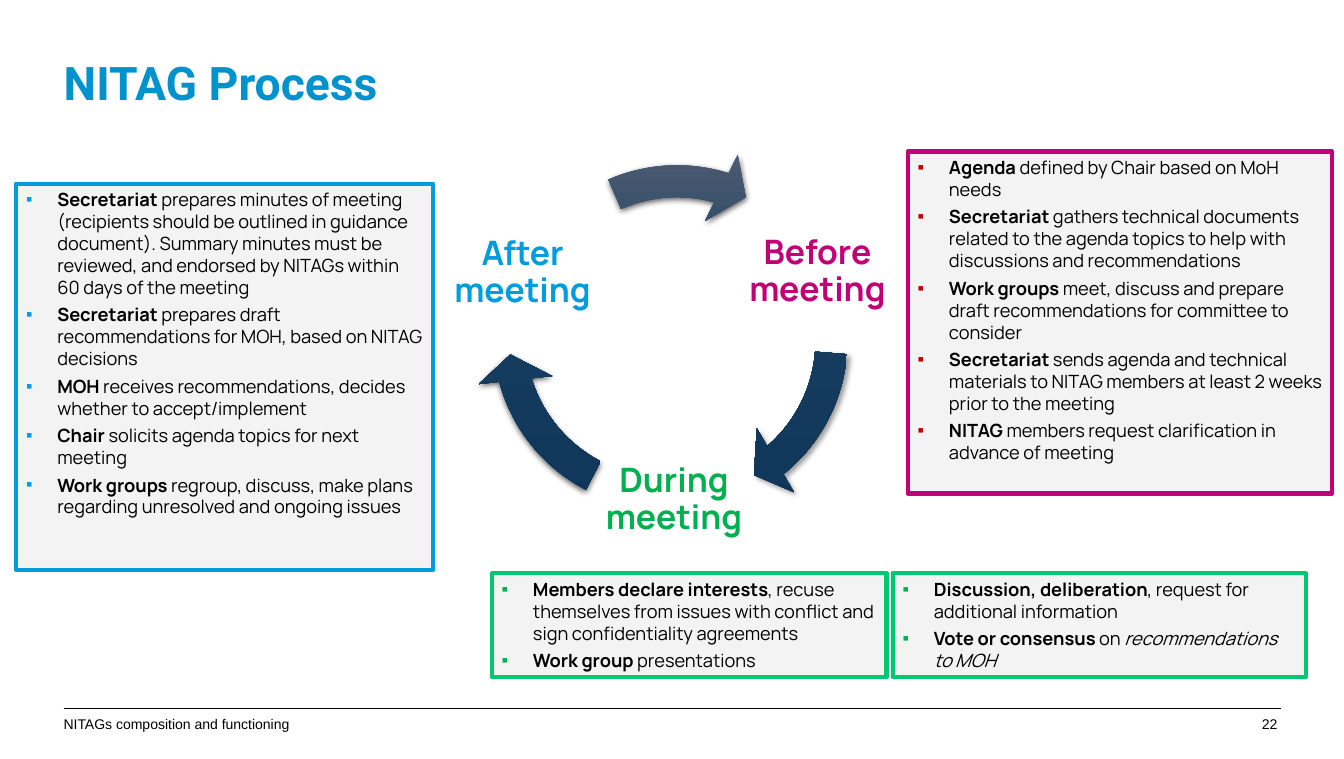
import pptx
import pptx.util
import pptx.dml.color
import pptx.enum.shapes
import pptx.enum.text
import pptx.oxml
import pptx.oxml.ns

Inches, Pt = pptx.util.Inches, pptx.util.Pt
Align = pptx.enum.text.PP_ALIGN
Anchor = pptx.enum.text.MSO_ANCHOR
Kind = pptx.enum.shapes.MSO_SHAPE

THEME = {
    "font": {"title": "Roboto", "body": "Manrope", "foot": "Arial"},
    "size": {"title": 33, "stage": 24, "body": 13, "foot": 10},
    "title": "0092CC", "ink": "000000", "panel": "F3F3F3",
    "blue": "009CDE", "pink": "C10077", "red": "C00000",
    "green": "00B050", "mint": "00C871",
    "arrow": ((0, "4D5C72"), (50, "153C5F"), (100, "0F3658")),
}

TITLE = "NITAG Process"
FOOT = "NITAGs composition and functioning"
PAGE = "22"

STAGES = [
    ("Before meeting", "pink", 7.29, 1.89),
    ("During meeting", "green", 5.87, 4.15),
    ("After meeting", "blue", 4.37, 1.9),
]

SOFT = (40, 4, 3, 45)
DEEP = (63, 4.5, 1.5, 90)
ARROWS = [
    (4.79, 1.47, 30.182, 2.724, SOFT),
    (4.68, 1.44, 98.481, 70.457, DEEP),
    (4.8, 1.43, 171.964, 147.823, DEEP),
]

PANELS = [
    ((0.16, 1.82, 4.13, 3.83), "blue", "blue", [
        [("Secretariat", "b"), (" prepares minutes of meeting (recipients should be outlined in "
                                "guidance document). Summary minutes must be reviewed, and "
                                "endorsed by NITAGs within 60 days of the meeting", "")],
        [("Secretariat", "b"), (" prepares draft recommendations for MOH, based on NITAG decisions", "")],
        [("MOH", "b"), (" receives recommendations, decides whether to accept/implement", "")],
        [("Chair", "b"), (" solicits agenda topics for next meeting", "")],
        [("Work groups", "b"), (" regroup, discuss, make plans regarding unresolved and ongoing issues", "")],
    ]),
    ((8.99, 1.5, 4.2, 3.39), "pink", "red", [
        [("Agenda", "b"), (" defined by Chair based on MoH needs", "")],
        [("Secretariat", "b"), (" gathers technical documents related to the agenda topics to help "
                                "with discussions and recommendations", "")],
        [("Work groups ", "b"), ("meet, discuss and prepare draft recommendations for committee to consider", "")],
        [("Secretariat", "b"), (" sends agenda and technical materials to NITAG members at least "
                                "2 weeks prior to the meeting", "")],
        [("NITAG ", "b"), ("members request clarification in advance of meeting", "")],
    ]),
    ((4.87, 5.68, 3.91, 1.03), "mint", "green", [
        [("Members declare interests", "b"), (", recuse themselves from issues with conflict and "
                                              "sign confidentiality agreements", "")],
        [("Work group ", "b"), ("presentations", "")],
    ]),
    ((8.84, 5.68, 4.09, 1.03), "mint", "green", [
        [("Discussion, deliberation", "b"), (", request for additional information", "")],
        [("Vote or consensus ", "b"), ("on ", ""), ("recommendations to MOH", "i")],
    ]),
]


def paint(name):
    return pptx.dml.color.RGBColor.from_string(THEME[name])


def parse(xml):
    head, tail = xml.split(">", 1)
    slash = "/" if head.endswith("/") else ""
    return pptx.oxml.parse_xml(f"{head.rstrip('/')} {pptx.oxml.ns.nsdecls('a')}{slash}>{tail}")


def write(para, text, size, face, tint, style=""):
    run = para.add_run()
    run.text = text
    font = run.font
    font.name = THEME["font"][face]
    font.size = Pt(THEME["size"][size])
    font.color.rgb = paint(tint)
    font.bold = "b" in style
    font.italic = "i" in style


def label(slide, box, text, size, face, tint, style="", align=Align.LEFT,
          anchor=Anchor.TOP, inset=0, lead=1):
    frame = slide.shapes.add_textbox(*map(Inches, box)).text_frame
    frame.word_wrap = True
    frame.vertical_anchor = anchor
    frame.margin_left = frame.margin_right = Inches(inset)
    frame.margin_top = frame.margin_bottom = Inches(inset)
    para = frame.paragraphs[0]
    para.alignment = align
    para.line_spacing = lead
    write(para, text, size, face, tint, style)


def arrow(slide, left, top, end, start, shade):
    shape = slide.shapes.add_shape(Kind.CIRCULAR_ARROW, *map(Inches, (left, top, 3.81, 3.81)))
    for spot, value in enumerate((0.083, 5.762, end, start, 0.096)):
        shape.adjustments[spot] = value
    shape.line.fill.background()
    stops = "".join(f'<a:gs pos="{pos * 1000}"><a:srgbClr val="{tint}"/></a:gs>'
                    for pos, tint in THEME["arrow"])
    props = shape._element.spPr
    props.find(pptx.oxml.ns.qn("a:prstGeom")).addnext(parse(
        f'<a:gradFill rotWithShape="1"><a:gsLst>{stops}</a:gsLst>'
        '<a:lin ang="5400000" scaled="0"/></a:gradFill>'))
    alpha, blur, dist, turn = shade
    props.append(parse(
        f'<a:effectLst><a:outerShdw blurRad="{Pt(blur)}" dist="{Pt(dist)}" dir="{turn * 60000}" '
        f'algn="ctr" rotWithShape="0"><a:srgbClr val="{THEME["ink"]}">'
        f'<a:alpha val="{alpha * 1000}"/></a:srgbClr></a:outerShdw></a:effectLst>'))


def bullet(para, tint):
    props = para._p.get_or_add_pPr()
    props.set("marL", str(Inches(0.31)))
    props.set("indent", str(Inches(-0.31)))
    for xml in (f'<a:buClr><a:srgbClr val="{THEME[tint]}"/></a:buClr>',
                f'<a:buFont typeface="{THEME["font"]["foot"]}"/>',
                '<a:buChar char="▪"/>'):
        props.append(parse(xml))


def panel(slide, box, edge, mark, items):
    shape = slide.shapes.add_shape(Kind.RECTANGLE, *map(Inches, box))
    shape.shadow.inherit = False
    shape.fill.solid()
    shape.fill.fore_color.rgb = paint("panel")
    shape.line.color.rgb = paint(edge)
    shape.line.width = Pt(3)
    frame = shape.text_frame
    frame.word_wrap = True
    frame.vertical_anchor = Anchor.TOP
    for spot, runs in enumerate(items):
        para = frame.add_paragraph() if spot else frame.paragraphs[0]
        para.alignment = Align.LEFT
        para.space_before = Pt(4 if spot else 0)
        bullet(para, mark)
        for text, style in runs:
            write(para, text, "body", "body", "ink", style)


def rule(slide):
    line = slide.shapes.add_connector(pptx.enum.shapes.MSO_CONNECTOR.STRAIGHT,
                                      *map(Inches, (0.63, 7.02, 12.69, 7.02)))
    line.line.color.rgb = paint("ink")
    line.line.width = Pt(0.75)
    line._element.spPr.append(parse("<a:effectLst/>"))


def main():
    deck = pptx.Presentation()
    deck.slide_width, deck.slide_height = Inches(13.31), Inches(7.52)
    slide = deck.slides.add_slide(deck.slide_layouts[6])
    rule(slide)
    label(slide, (11.67, 7.09, 0.98, 0.12), PAGE, "foot", "foot", "ink", align=Align.RIGHT)
    label(slide, (0.63, 0.6, 12.02, 0.51), TITLE, "title", "title", "title", "b", lead=0.9)
    label(slide, (0.63, 7.09, 8.27, 0.12), FOOT, "foot", "foot", "ink")
    for (text, tint, left, top), curve in zip(STAGES, ARROWS):
        label(slide, (left, top, 1.61, 1.61), text, "stage", "body", tint, "b",
              Align.CENTER, Anchor.MIDDLE, 0.03, 0.9)
        arrow(slide, *curve)
    for item in PANELS:
        panel(slide, *item)
    deck.save("out.pptx")


if __name__ == "__main__":
    main()
